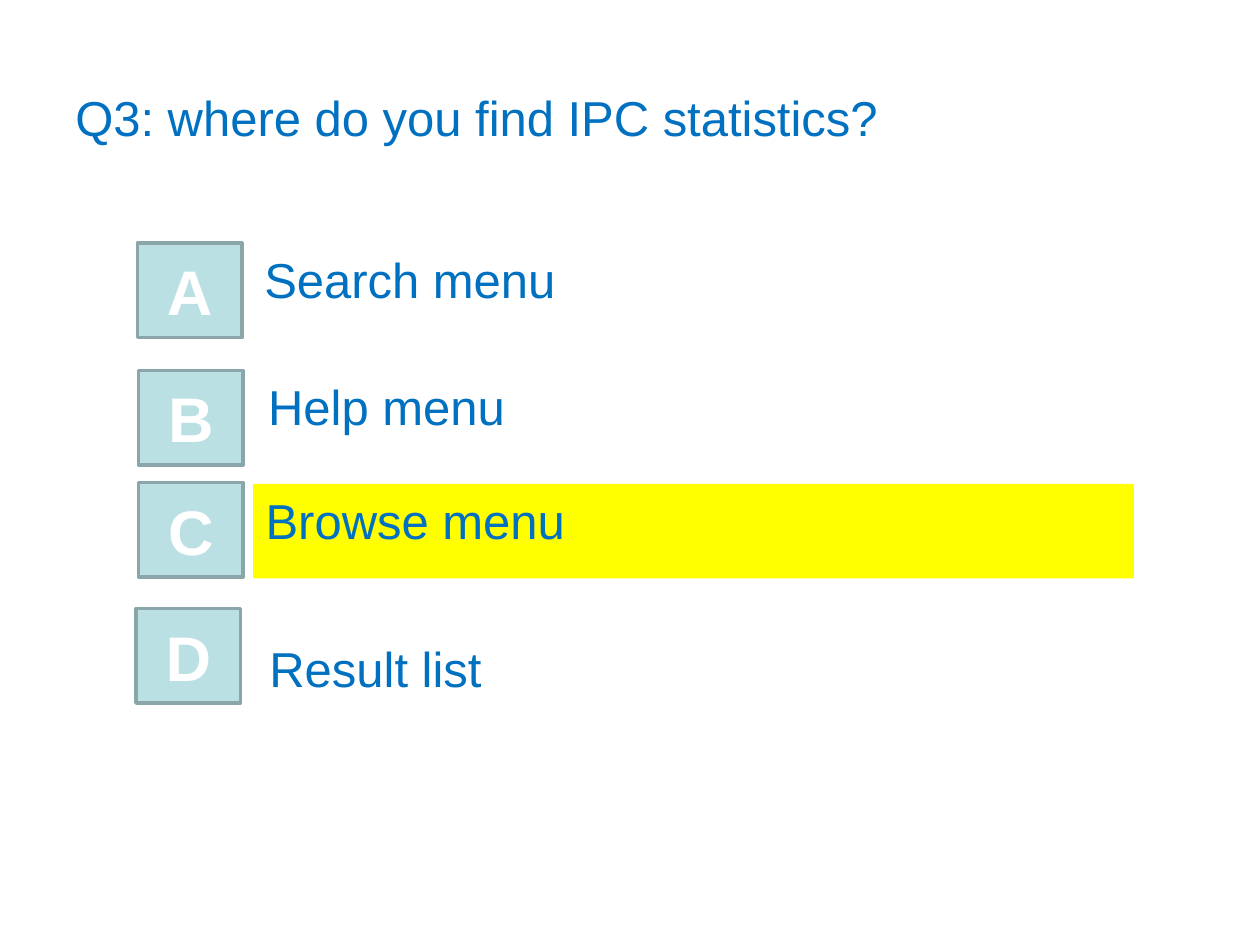
import pptx
import pptx.util
import pptx.dml.color
import pptx.enum.shapes
import pptx.enum.text
from dataclasses import dataclass

Kind = pptx.enum.shapes.MSO_SHAPE
Align = pptx.enum.text.PP_ALIGN
Anchor = pptx.enum.text.MSO_ANCHOR
COLS, ROWS = 100, 75


@dataclass(frozen=True)
class Theme:
    font: str = "Arial"
    ink: str = "0070C0"
    mark: str = "FFFF00"
    tile: str = "BBE0E3"
    edge: str = "8AA6A8"
    white: str = "FFFFFF"
    body: int = 28
    letter: int = 36
    line: int = 2


def color(code):
    return pptx.dml.color.RGBColor.from_string(code)


def write(frame, text, font, size, ink, bold=False,
          align=Align.LEFT, anchor=Anchor.TOP):
    frame.word_wrap = True
    frame.vertical_anchor = anchor
    para = frame.paragraphs[0]
    para.alignment = align
    run = para.add_run()
    run.text = text
    run.font.name = font
    run.font.size = pptx.util.Pt(size)
    run.font.bold = bold
    run.font.color.rgb = color(ink)


class Deck:
    def __init__(self, theme):
        self.theme = theme
        self.prs = pptx.Presentation()
        self.prs.slide_width = pptx.util.Inches(10)
        self.prs.slide_height = pptx.util.Inches(7.5)
        self.slide = self.prs.slides.add_slide(self.prs.slide_layouts[6])

    def place(self, col, row, wide, high):
        """Turn grid columns and rows into lengths."""
        x = self.prs.slide_width / COLS
        y = self.prs.slide_height / ROWS
        return [round(n) for n in (col * x, row * y, wide * x, high * y)]

    def label(self, text, box, anchor=Anchor.TOP):
        shape = self.slide.shapes.add_textbox(*self.place(*box))
        write(shape.text_frame, text, self.theme.font, self.theme.body,
              self.theme.ink, anchor=anchor)

    def block(self, kind, box, fill):
        shape = self.slide.shapes.add_shape(kind, *self.place(*box))
        shape.shadow.inherit = False
        shape.fill.solid()
        shape.fill.fore_color.rgb = color(fill)
        shape.line.fill.background()
        return shape

    def band(self, text, box):
        shape = self.block(Kind.RECTANGLE, box, self.theme.mark)
        write(shape.text_frame, text, self.theme.font, self.theme.body,
              self.theme.ink)

    def button(self, text, box):
        shape = self.block(Kind.ACTION_BUTTON_CUSTOM, box, self.theme.tile)
        shape.line.color.rgb = color(self.theme.edge)
        shape.line.width = pptx.util.Pt(self.theme.line)
        write(shape.text_frame, text, self.theme.font, self.theme.letter,
              self.theme.white, bold=True, align=Align.CENTER,
              anchor=Anchor.MIDDLE)


def main():
    deck = Deck(Theme())

    # Question
    deck.label("Q3: where do you find IPC statistics?", (5, 3, 90, 12.5),
               anchor=Anchor.MIDDLE)

    # Answers: letter, button column and row, text, text box, drawing method
    answers = [
        ("A", 10.9, 19.3, "Search menu", (20, 19.3, 65, 8), deck.label),
        ("B", 11, 29.4, "Help menu", (20.3, 29.4, 68.3, 7.5), deck.label),
        ("C", 11, 38.3, "Browse menu", (20.1, 38.4, 69.9, 7.5), deck.band),
        ("D", 10.8, 48.3, "Result list", (20.4, 50.2, 71.3, 5.7), deck.label),
    ]
    for letter, col, row, text, box, draw in answers:
        draw(text, box)
        deck.button(letter, (col, row, 8.3, 7.5))

    deck.prs.save("out.pptx")


if __name__ == "__main__":
    main()
